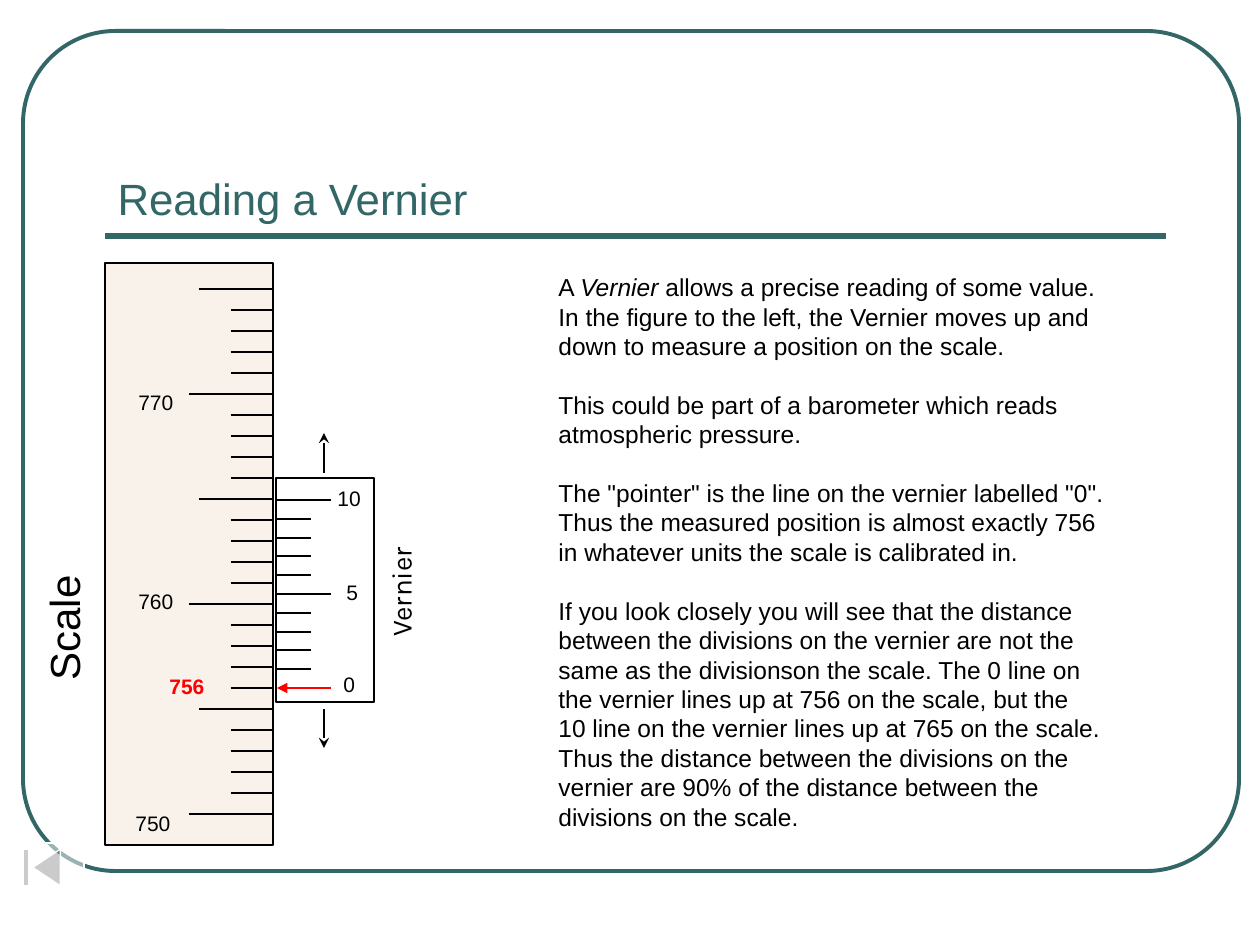
"""Build a slide that explains how to read a vernier scale."""
from dataclasses import dataclass, field

from lxml.etree import SubElement
from pptx import Presentation
from pptx.dml.color import RGBColor
from pptx.enum.shapes import MSO_CONNECTOR as Connector, MSO_SHAPE as Shape
from pptx.enum.text import MSO_ANCHOR as Anchor, MSO_AUTO_SIZE as AutoSize, PP_ALIGN as Align
from pptx.oxml.ns import qn
from pptx.util import Emu, Pt

EMU_PER_PX = 914400 / 126

EXPLANATION = """A *Vernier* allows a precise reading of some value.
In the figure to the left, the Vernier moves up and
down to measure a position on the scale.

This could be part of a barometer which reads
atmospheric pressure.

The "pointer" is the line on the vernier labelled "0".
Thus the measured position is almost exactly 756
in whatever units the scale is calibrated in.

If you look closely you will see that the distance
between the divisions on the vernier are not the
same as the divisionson the scale. The 0 line on
the vernier lines up at 756 on the scale, but the
10 line on the vernier lines up at 765 on the scale.
Thus the distance between the divisions on the
vernier are 90% of the distance between the
divisions on the scale."""


@dataclass(frozen=True)
class Theme:
    accent: str = "336666"
    ink: str = "000000"
    pointer: str = "FF0000"
    scale: str = "F7EEE5"
    paper: str = "FFFFFF"
    font: str = "Arial"
    vernier_font: str = "Karla"
    sizes: dict = field(default_factory=lambda: {
        "title": 25, "scale": 24, "vernier": 16, "body": 14, "label": 12})


def px(length):
    return Emu(round(length * EMU_PER_PX))


def color(value):
    return RGBColor.from_string(value)


def write(frame, text, *, size, ink, font, bold=False, align=Align.LEFT, leading=None):
    paragraph = None
    for block in text.split("\n\n"):
        for index, line in enumerate(block.split("\n")):
            starts_block = paragraph is not None and index == 0
            paragraph = frame.paragraphs[0] if paragraph is None else frame.add_paragraph()
            paragraph.alignment = align
            if leading:
                paragraph.line_spacing = Pt(leading)
                paragraph.space_before = Pt(leading if starts_block else 0)
            for part, words in enumerate(line.split("*")):
                run = paragraph.add_run()
                run.text = words
                run.font.size = Pt(size)
                run.font.name = font
                run.font.bold = bold
                run.font.italic = part % 2 == 1
                run.font.color.rgb = color(ink)


class SlideBuilder:
    def __init__(self, slide, theme):
        self.slide = slide
        self.theme = theme

    def title(self, text, left, top, width, height):
        shape = self.slide.shapes.title
        shape.left, shape.top, shape.width, shape.height = map(px, (left, top, width, height))
        shape.text_frame.vertical_anchor = Anchor.BOTTOM
        write(shape.text_frame, text, size=self.theme.sizes["title"],
              ink=self.theme.accent, font=self.theme.font)

    def box(self, kind, left, top, width, height, *, line, weight=0.75,
            fill=None, opacity=100, corner=None):
        shape = self.slide.shapes.add_shape(kind, *map(px, (left, top, width, height)))
        shape.shadow.inherit = False
        shape.line.color.rgb = color(line)
        shape.line.width = Pt(weight)
        if corner:
            shape.adjustments[0] = corner
        if not fill:
            shape.fill.background()
            return
        shape.fill.solid()
        shape.fill.fore_color.rgb = color(fill)
        fill_color = shape._element.spPr.find(qn("a:solidFill"))[0]
        SubElement(fill_color, qn("a:alpha"), val=str(opacity * 1000))

    def line(self, start, end, *, ink=None, weight=0.75, arrow=None):
        connector = self.slide.shapes.add_connector(
            Connector.STRAIGHT, *map(px, (*start, *end)))
        connector.line.color.rgb = color(ink or self.theme.ink)
        connector.line.width = Pt(weight)
        properties = connector._element.spPr
        if arrow:
            SubElement(properties.find(qn("a:ln")), qn("a:tailEnd"), type=arrow)
        SubElement(properties, qn("a:effectLst"))

    def text(self, text, left, top, width, height, *, style="label", ink=None,
             font=None, wrap=False, rotation=0, **options):
        shape = self.slide.shapes.add_textbox(*map(px, (left, top, width, height)))
        shape.rotation = rotation
        shape.text_frame.word_wrap = wrap
        shape.text_frame.auto_size = AutoSize.SHAPE_TO_FIT_TEXT
        write(shape.text_frame, text, size=self.theme.sizes[style],
              ink=ink or self.theme.ink, font=font or self.theme.font, **options)


def draw_scale(builder):
    theme = builder.theme
    builder.box(Shape.RECTANGLE, 105, 263, 168, 582,
                line=theme.ink, fill=theme.scale, opacity=76)
    for division in range(26):
        left = 189 if division % 10 == 0 else 199 if division % 5 == 0 else 231
        y = 814 - 21 * division
        builder.line((left, y), (273, y))
    for value, left, top in (("750", 123, 804), ("760", 126, 582), ("770", 126, 383)):
        builder.text(value, left, top, 60, 38)
    builder.text("756", 157, 667, 60, 38, ink=theme.pointer, bold=True)
    builder.text("Scale", -2, 596, 131, 63, style="scale", rotation=270)


def draw_vernier(builder):
    theme = builder.theme
    builder.box(Shape.RECTANGLE, 276, 478, 98, 224, line=theme.ink)
    for division in range(1, 11):
        y = round(688 - 18.8 * division)
        builder.line((277, y), (331 if division % 5 == 0 else 311, y))
    builder.line((331, 688), (277, 688), ink=theme.pointer, arrow="triangle")
    for value, left, top, width in (("0", 331, 665, 37), ("5", 334, 573, 37),
                                    ("10", 325, 479, 49)):
        builder.text(value, left, top, width, 38)
    for start, end in ((473, 433), (709, 748)):
        builder.line((324, start), (324, end), weight=1, arrow="stealth")
    builder.text("Vernier", 343, 567, 116, 47, style="vernier",
                 font=theme.vernier_font, rotation=270)


def main():
    presentation = Presentation()
    presentation.slide_width, presentation.slide_height = px(1260), px(945)
    theme = Theme()
    slide = presentation.slides.add_slide(presentation.slide_layouts[5])
    builder = SlideBuilder(slide, theme)
    builder.box(Shape.ROUNDED_RECTANGLE, 23, 31, 1216, 840,
                line=theme.accent, weight=2.25, corner=0.11)
    builder.line((105, 236), (1166, 236), ink=theme.accent, weight=3)
    builder.title("Reading a Vernier", 105, 73, 1061, 158)
    draw_scale(builder)
    draw_vernier(builder)
    builder.text(EXPLANATION, 546, 266, 735, 570, style="body", wrap=True, leading=16.8)
    builder.box(Shape.ACTION_BUTTON_BEGINNING, 0, 843, 84, 49,
                line=theme.paper, fill=theme.paper, opacity=50)
    presentation.save("out.pptx")


if __name__ == "__main__":
    main()
